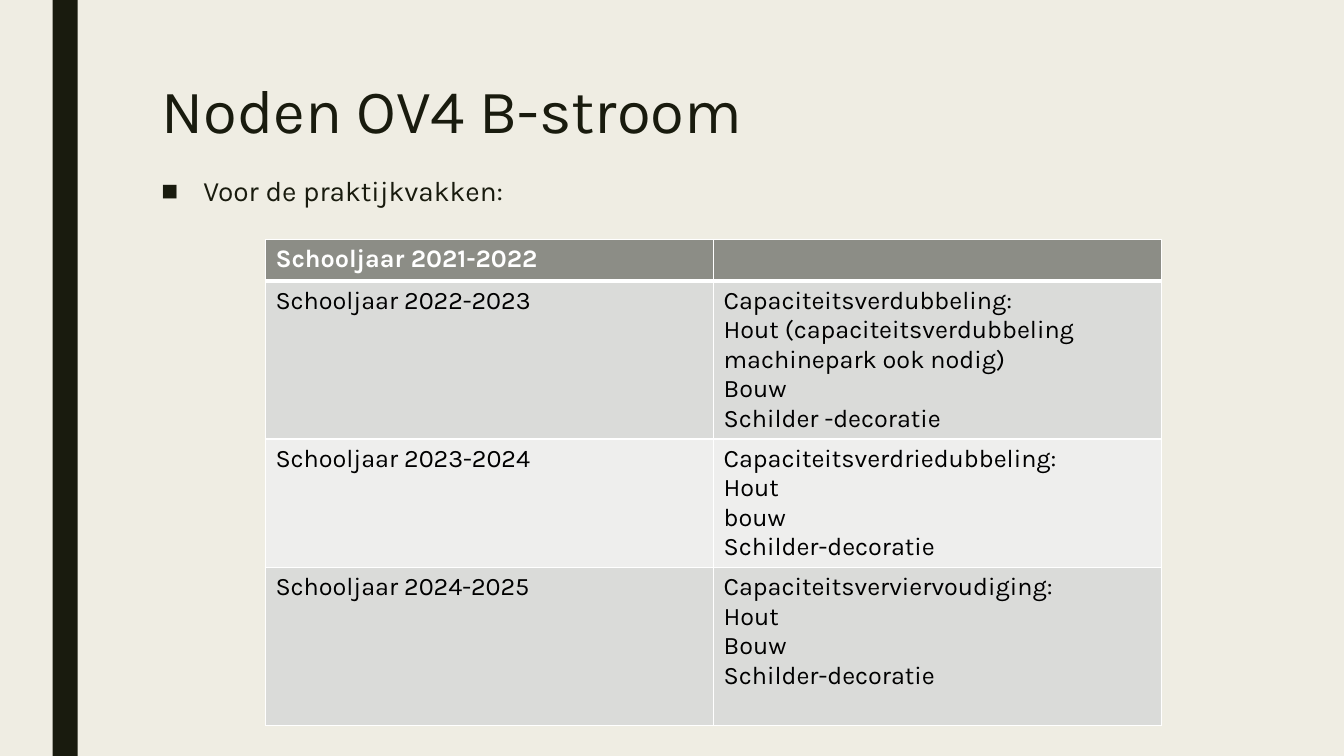
from dataclasses import dataclass
from typing import Any

from lxml.etree import SubElement
from pptx import Presentation
from pptx.dml.color import RGBColor
from pptx.enum.shapes import MSO_SHAPE
from pptx.enum.text import MSO_ANCHOR, MSO_AUTO_SIZE, PP_ALIGN
from pptx.oxml.ns import qn
from pptx.util import Inches, Pt

UNIT = Inches(1) / 12
COLUMNS, ROWS = 160, 90


@dataclass(frozen=True)
class Theme:
    font: str = "Karla"
    background: str = "EFEDE3"
    ink: str = "191B0E"
    header: str = "8C8D86"
    bands: tuple[str, str] = ("DADBD9", "EEEEED")
    white: str = "FFFFFF"
    black: str = "000000"
    title_size: int = 44
    body_size: int = 20
    table_size: int = 18


@dataclass(frozen=True)
class Area:
    column: float
    row: float
    width: float
    height: float

    def box(self) -> tuple[int, ...]:
        return tuple(map(grid, (self.column, self.row, self.width, self.height)))


@dataclass(frozen=True)
class SchoolYear:
    label: str
    needs: tuple[str, ...]
    height: float


THEME = Theme()
BAR = Area(6.25, 0, 3, ROWS)
TITLE = Area(18, 9, 126, 19.5)
BODY = Area(18, 20.4, 126, 47)
TABLE = Area(31.6, 28.5, 106.7, 57.7)
YEARS = (
    SchoolYear("Schooljaar 2021-2022", (), 4.95),
    SchoolYear("Schooljaar 2022-2023", (
        "Capaciteitsverdubbeling:",
        "Hout (capaciteitsverdubbeling machinepark ook nodig)",
        "Bouw",
        "Schilder -decoratie",
    ), 18.7),
    SchoolYear("Schooljaar 2023-2024", (
        "Capaciteitsverdriedubbeling:", "Hout", "bouw", "Schilder-decoratie",
    ), 15.25),
    SchoolYear("Schooljaar 2024-2025", (
        "Capaciteitsverviervoudiging:", "Hout", "Bouw", "Schilder-decoratie",
    ), 18.8),
)


def grid(units: float) -> int:
    return round(units * UNIT)


def apply(target: Any, values: dict[str, Any]) -> None:
    for attribute, value in values.items():
        setattr(target, attribute, value)


def paint(fill: Any, color: str) -> None:
    fill.solid()
    fill.fore_color.rgb = RGBColor.from_string(color)


def style(font: Any, size: int, color: str, bold: bool = False) -> None:
    apply(font, {"name": THEME.font, "size": Pt(size), "bold": bold})
    font.color.rgb = RGBColor.from_string(color)


def place(holder: Any, area: Area, text: str, size: int, spacing: dict[str, Any]) -> Any:
    apply(holder, dict(zip(("left", "top", "width", "height"), area.box())))
    apply(holder.text_frame, {
        "text": text,
        "word_wrap": True,
        "auto_size": MSO_AUTO_SIZE.NONE,
        "vertical_anchor": MSO_ANCHOR.TOP,
    })
    paragraph = holder.text_frame.paragraphs[0]
    apply(paragraph, {"alignment": PP_ALIGN.LEFT, **spacing})
    style(paragraph.runs[0].font, size, THEME.ink)
    return paragraph


def add_bullet(paragraph: Any) -> None:
    properties = paragraph._p.get_or_add_pPr()
    properties.set("marL", str(grid(5)))
    properties.set("indent", str(-grid(5)))
    SubElement(properties, qn("a:buFont"), typeface="Arial")
    SubElement(properties, qn("a:buChar"), char="■")


def add_borders(cell: Any, top: int, bottom: int) -> None:
    properties = cell._tc.get_or_add_tcPr()
    for side, width in {"L": 1, "R": 1, "T": top, "B": bottom}.items():
        line = SubElement(properties, qn(f"a:ln{side}"), w=str(Pt(width)))
        fill = SubElement(line, qn("a:solidFill"))
        SubElement(fill, qn("a:srgbClr"), val=THEME.white)


def add_years(slide: Any) -> None:
    table = slide.shapes.add_table(len(YEARS), 2, *TABLE.box()).table
    for column in table.columns:
        column.width = grid(TABLE.width / 2)
    for index, year in enumerate(YEARS):
        table.rows[index].height = grid(year.height)
        header = index == 0
        band = THEME.header if header else THEME.bands[(index - 1) % 2]
        color = THEME.white if header else THEME.black
        for cell, lines in zip(table.rows[index].cells, ((year.label,), year.needs)):
            add_borders(cell, top=3 if index == 1 else 1, bottom=3 if header else 1)
            paint(cell.fill, band)
            cell.text = "\n".join(lines)
            for paragraph in cell.text_frame.paragraphs:
                style(paragraph.font, THEME.table_size, color, header)
                for run in paragraph.runs:
                    style(run.font, THEME.table_size, color, header)


def main() -> None:
    presentation = Presentation()
    apply(presentation, {"slide_width": grid(COLUMNS), "slide_height": grid(ROWS)})
    slide = presentation.slides.add_slide(presentation.slide_layouts[1])
    paint(slide.background.fill, THEME.background)

    bar = slide.shapes.add_shape(MSO_SHAPE.RECTANGLE, *BAR.box())
    bar.shadow.inherit = False
    paint(bar.fill, THEME.ink)
    bar.line.fill.background()

    place(slide.shapes.title, TITLE, "Noden OV4 B-stroom", THEME.title_size,
          {"line_spacing": 0.89})
    practice = place(slide.placeholders[1], BODY, "Voor de praktijkvakken:", THEME.body_size,
                     {"line_spacing": 0.94, "space_before": Pt(10), "space_after": Pt(2)})
    add_bullet(practice)
    add_years(slide)
    presentation.save("out.pptx")


if __name__ == "__main__":
    main()
